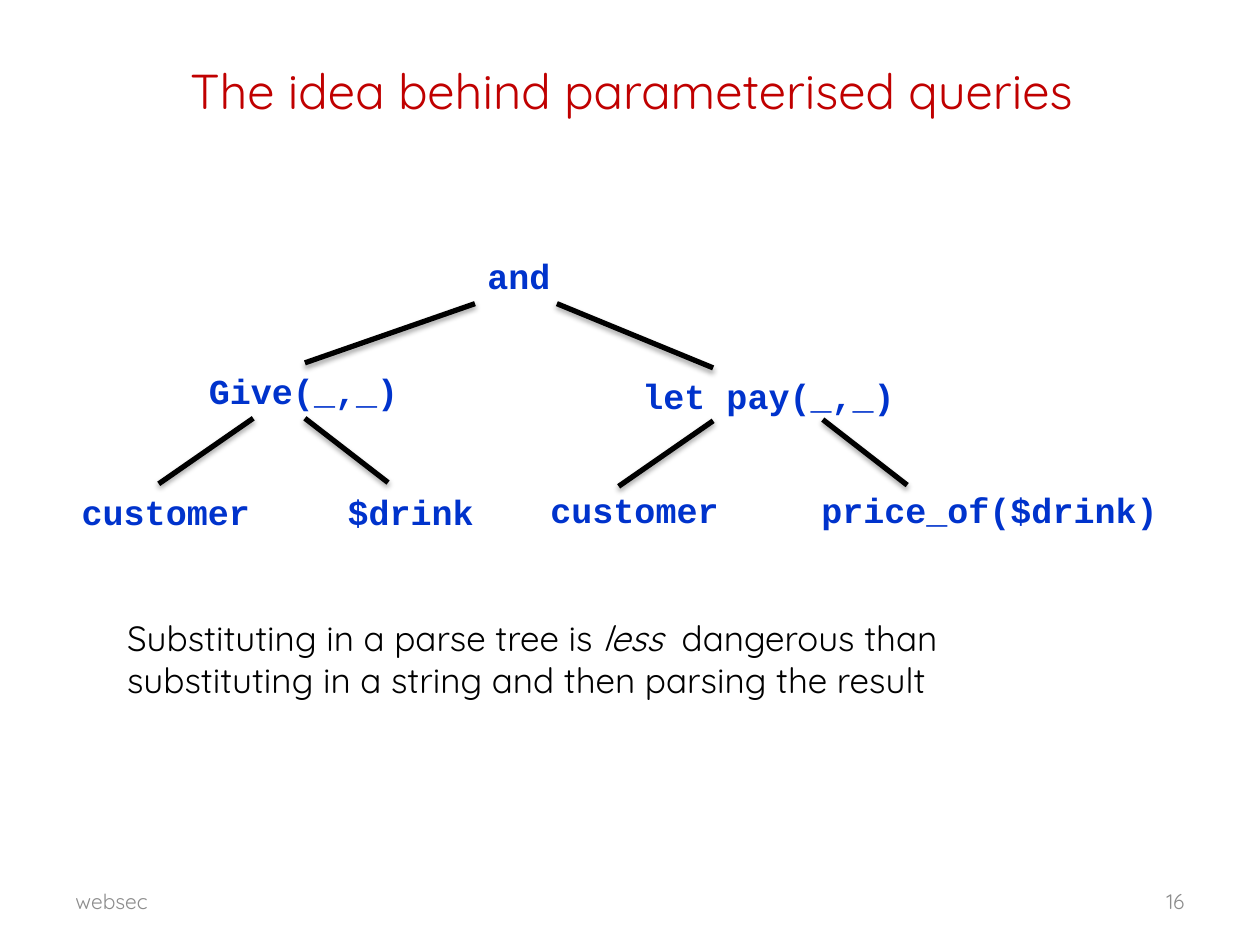
from lxml import etree
from pptx import Presentation
from pptx import util as u
from pptx.dml.color import RGBColor
from pptx.enum import shapes, text
from pptx.oxml import ns

HUES = {"title": "C00000", "code": "0033CC", "ink": "000000", "foot": "8C8C8C"}
SHADE = (
    '<a:effectLst xmlns:a="http://schemas.openxmlformats.org/drawingml/2006/main">'
    '<a:outerShdw blurRad="39370" dist="22860" dir="5400000" rotWithShape="0">'
    '<a:srgbClr val="000000"><a:alpha val="35000"/></a:srgbClr>'
    '</a:outerShdw></a:effectLst>'
)


class Deck:
    sans = "Quicksand"
    mono = "Courier New"

    def __init__(self):
        self.prs = Presentation()
        self.prs.slide_width = u.Inches(10)
        self.prs.slide_height = u.Inches(7.5)
        self.slide = self.prs.slides.add_slide(self.prs.slide_layouts[5])

    def run(self, para, words, size, hue, font, bold=False, slant=False):
        run = para.add_run()
        run.text = words
        run.font.size = u.Pt(size)
        run.font.name = font
        run.font.bold = bold
        run.font.italic = slant
        run.font.color.rgb = RGBColor.from_string(HUES[hue])

    def title(self, words, *box):
        shape = self.slide.shapes.title
        shape.left, shape.top, shape.width, shape.height = map(u.Inches, box)
        frame = shape.text_frame
        frame.vertical_anchor = text.MSO_ANCHOR.MIDDLE
        para = frame.paragraphs[0]
        para.alignment = text.PP_ALIGN.CENTER
        self.run(para, words, 28, "title", self.sans)

    def box(self, *box):
        shape = self.slide.shapes.add_textbox(*map(u.Inches, box))
        shape.text_frame.word_wrap = False
        shape.text_frame.auto_size = text.MSO_AUTO_SIZE.SHAPE_TO_FIT_TEXT
        return shape

    def node(self, words, left, top, width):
        shape = self.box(left, top, width, 0.44)
        self.run(shape.text_frame.paragraphs[0], words, 20, "code", self.mono, bold=True)
        return shape

    def foot(self, words, left, align):
        frame = self.box(left, 6.95, 2.33, 0.4).text_frame
        frame.auto_size = text.MSO_AUTO_SIZE.NONE
        frame.word_wrap = True
        frame.vertical_anchor = text.MSO_ANCHOR.MIDDLE
        para = frame.paragraphs[0]
        para.alignment = align
        self.run(para, words, 12, "foot", self.sans)

    def note(self, lines, *box):
        frame = self.box(*box).text_frame
        for i, line in enumerate(lines):
            para = frame.add_paragraph() if i else frame.paragraphs[0]
            for words, slant in line:
                self.run(para, words, 20, "ink", self.sans, slant=slant)

    def edge(self, *ends):
        line = self.slide.shapes.add_connector(
            shapes.MSO_CONNECTOR.STRAIGHT, *map(u.Inches, ends))
        line.line.width = u.Pt(3)
        line.line.color.rgb = RGBColor.from_string(HUES["ink"])
        line._element.find(ns.qn("p:spPr")).append(etree.fromstring(SHADE))
        return line


def main():
    deck = Deck()
    deck.title("The idea behind parameterised queries", 0.51, 0.21, 9, 1.01)
    deck.foot("websec", 0.5, text.PP_ALIGN.LEFT)
    deck.foot("16", 7.17, text.PP_ALIGN.RIGHT)

    deck.node("and", 3.77, 1.97, 0.71)
    give = deck.node("Give(_,_)", 1.56, 2.88, 1.72)
    deck.node("let pay(_,_)", 5, 2.92, 2.39)
    deck.node("customer", 0.55, 3.84, 1.55)
    deck.node("$drink", 2.66, 3.84, 1.21)
    deck.node("customer", 4.27, 3.83, 1.55)
    deck.node("price_of($drink)", 6.42, 3.83, 3.06)

    deck.edge(3.77, 2.41, 2.4, 2.88).end_connect(give, 0)
    deck.edge(2.42, 3.31, 3.08, 3.83).begin_connect(give, 2)
    for ends in (
        (4.42, 2.41, 5.66, 2.92),
        (2.01, 3.32, 1.26, 3.84),
        (5.66, 3.34, 4.91, 3.86),
        (6.53, 3.33, 7.2, 3.85),
    ):
        deck.edge(*ends)

    deck.note([
        [("Substituting in a parse tree is ", False), ("less ", True),
         (" dangerous than", False)],
        [("substituting in a string and then parsing the result", False)],
    ], 0.91, 4.84, 7.12, 0.77)
    deck.prs.save("out.pptx")


if __name__ == "__main__":
    main()
